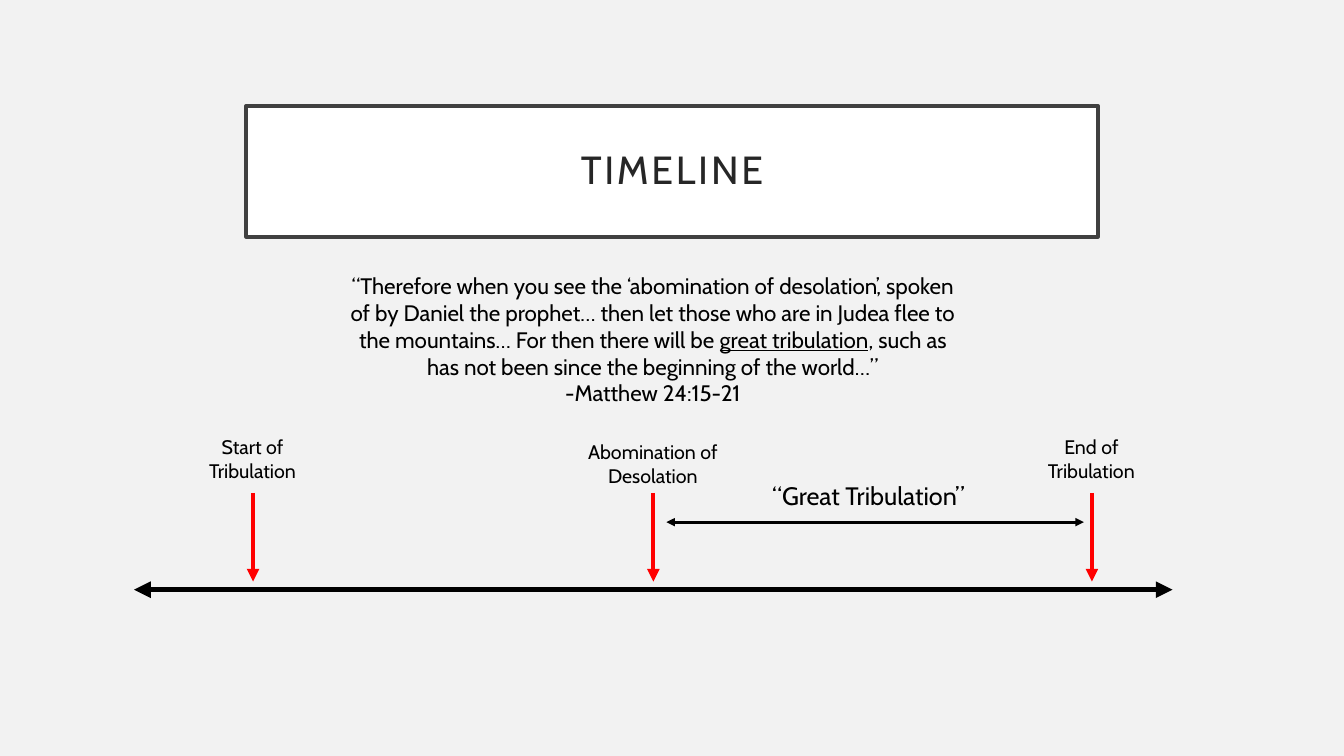
from dataclasses import dataclass

import pptx
import pptx.dml.color
import pptx.enum.shapes
import pptx.enum.text
import pptx.oxml.ns
import pptx.util
from lxml import etree

PX = 9144  # EMU in one px, at 100 px to the inch
ALIGN = pptx.enum.text.PP_ALIGN
FIT = pptx.enum.text.MSO_AUTO_SIZE.SHAPE_TO_FIT_TEXT


@dataclass(frozen=True)
class Theme:
    font: str = "Cabin"
    background: str = "F2F2F2"
    panel: str = "FFFFFF"
    frame: str = "404040"
    heading: str = "262626"
    ink: str = "000000"
    marker: str = "FF0000"
    title_size: int = 28
    span_size: int = 18
    quote_size: int = 16
    label_size: int = 14


@dataclass(frozen=True)
class Box:
    left: int
    top: int
    width: int
    height: int

    def emu(self) -> list[int]:
        return [side * PX for side in (self.left, self.top, self.width, self.height)]


@dataclass(frozen=True)
class Event:
    label: str
    x: int
    label_top: int


@dataclass(frozen=True)
class Arrow:
    start: tuple[int, int]
    end: tuple[int, int]
    color: str
    weight: int
    both_ends: bool = True


THEME = Theme()
EVENTS = [
    Event("Start of Tribulation", 251, 427),
    Event("Abomination of Desolation", 648, 432),
    Event("End of Tribulation", 1083, 427),
]
LABEL_WIDTH, LABEL_HEIGHT = 149, 57
MARKER_TOP, MARKER_BOTTOM = 489, 577
QUOTE = [
    [
        "“Therefore when you see the ‘abomination of desolation’, spoken of by Daniel "
        "the prophet… then let those who are in Judea flee to the mountains… For then "
        "there will be ",
        "great tribulation",
        ", such as has not been since the beginning of the world…”",
    ],
    ["-Matthew 24:15-21"],
]
UNDERLINED = "great tribulation"


def rgb(color: str) -> pptx.dml.color.RGBColor:
    return pptx.dml.color.RGBColor.from_string(color)


def style_span(span, size: int, color: str) -> None:
    span.font.name = THEME.font
    span.font.size = pptx.util.Pt(size)
    span.font.color.rgb = rgb(color)


def add_text(page, box: Box, paras: list[list[str]], size: int,
             align=ALIGN.CENTER, wrap: bool = True) -> None:
    frame = page.shapes.add_textbox(*box.emu()).text_frame
    frame.word_wrap = wrap
    frame.auto_size = FIT
    for index, texts in enumerate(paras):
        para = frame.add_paragraph() if index else frame.paragraphs[0]
        para.alignment = align
        for text in texts:
            span = para.add_run()
            span.text = text
            style_span(span, size, THEME.ink)
            if text == UNDERLINED:
                span.font.underline = True


def add_arrow(page, arrow: Arrow) -> None:
    ends = [value * PX for value in (*arrow.start, *arrow.end)]
    connector = page.shapes.add_connector(
        pptx.enum.shapes.MSO_CONNECTOR.STRAIGHT, *ends)
    connector.line.color.rgb = rgb(arrow.color)
    connector.line.width = pptx.util.Pt(arrow.weight)
    properties = connector.element.spPr
    outline = properties.find(pptx.oxml.ns.qn("a:ln"))
    for tag in ("a:headEnd", "a:tailEnd") if arrow.both_ends else ("a:tailEnd",):
        etree.SubElement(outline, pptx.oxml.ns.qn(tag), type="triangle")
    etree.SubElement(properties, pptx.oxml.ns.qn("a:effectLst"))


def add_title(page, box: Box, text: str) -> None:
    panel = page.shapes.add_shape(
        pptx.enum.shapes.MSO_SHAPE.RECTANGLE, *box.emu())
    panel.shadow.inherit = False
    panel.fill.solid()
    panel.fill.fore_color.rgb = rgb(THEME.panel)
    panel.line.color.rgb = rgb(THEME.frame)
    panel.line.width = pptx.util.Pt(2.5)
    frame = panel.text_frame
    frame.text = text
    frame.word_wrap = True
    frame.vertical_anchor = pptx.enum.text.MSO_ANCHOR.MIDDLE
    frame.margin_left = frame.margin_right = 20 * PX
    frame.margin_top = frame.margin_bottom = 20 * PX
    para = frame.paragraphs[0]
    para.alignment = ALIGN.CENTER
    para.line_spacing = 0.9
    span = para.runs[0]
    style_span(span, THEME.title_size, THEME.heading)
    span.font._element.set("spc", "200")  # letter spacing of 2 pt


def add_event(page, event: Event) -> None:
    add_arrow(page, Arrow((event.x, MARKER_TOP), (event.x, MARKER_BOTTOM),
                          THEME.marker, 3, both_ends=False))
    box = Box(event.x - 75, event.label_top, LABEL_WIDTH, LABEL_HEIGHT)
    add_text(page, box, [[event.label]], THEME.label_size)


def main() -> None:
    deck = pptx.Presentation()
    deck.slide_width, deck.slide_height = 1333 * PX, 750 * PX
    page = deck.slides.add_slide(deck.slide_layouts[6])
    page.background.fill.solid()
    page.background.fill.fore_color.rgb = rgb(THEME.background)

    # Title and quotation
    add_title(page, Box(244, 105, 845, 130), "TIMELINE")
    add_text(page, Box(330, 265, 635, 145), QUOTE, THEME.quote_size)

    # Time axis and its events
    add_arrow(page, Arrow((133, 585), (1163, 585), THEME.ink, 4))
    for event in EVENTS:
        add_event(page, event)

    # Span between the last two events
    add_arrow(page, Arrow((661, 518), (1075, 518), THEME.ink, 2))
    add_text(page, Box(756, 472, 213, 40), [["“Great Tribulation”"]],
             THEME.span_size, align=ALIGN.LEFT, wrap=False)

    deck.save("out.pptx")


if __name__ == "__main__":
    main()
